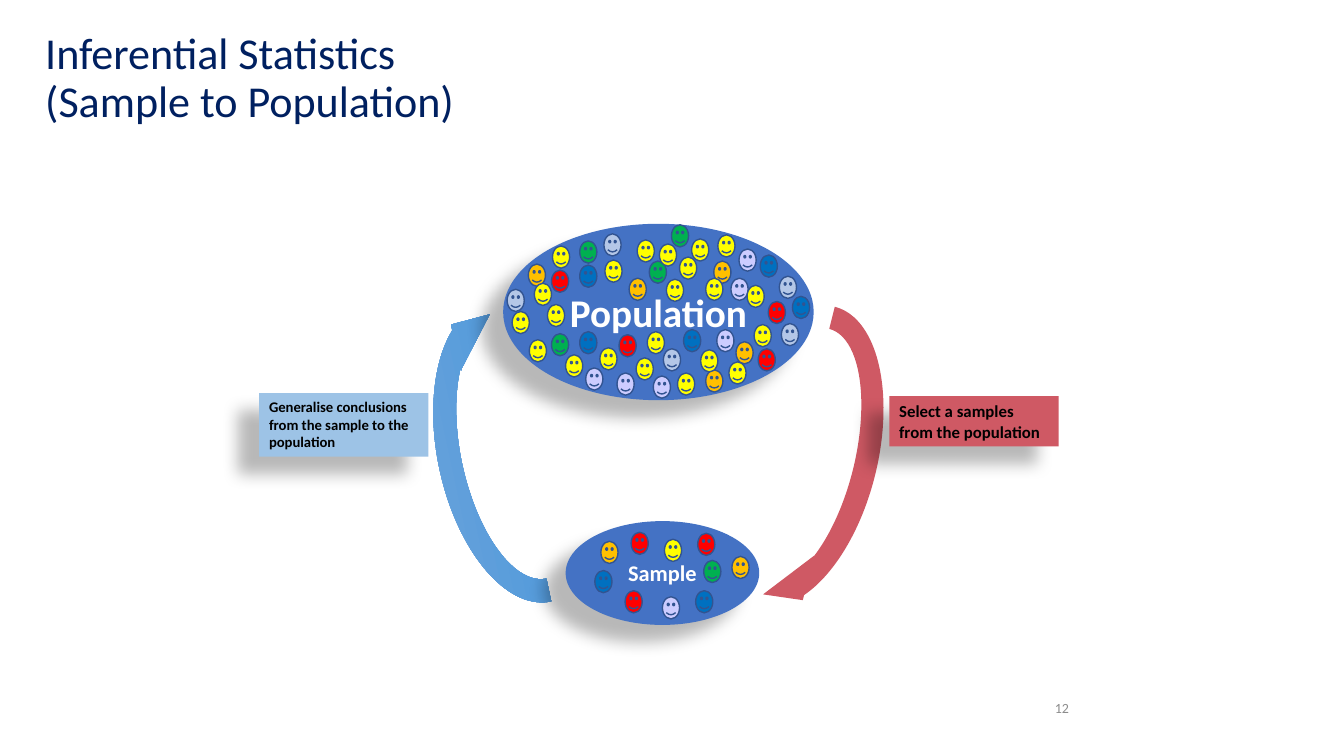
from pptx import Presentation
from pptx.dml.color import RGBColor
from pptx.enum import shapes, text
from pptx.oxml import parse_xml
from pptx.oxml.ns import nsdecls
from pptx.util import Inches, Pt

NAVY = RGBColor(0x00, 0x20, 0x60)
GREY = RGBColor(0x8C, 0x8C, 0x8C)
BLACK = RGBColor(0x00, 0x00, 0x00)
WHITE = RGBColor(0xFF, 0xFF, 0xFF)
ROYAL = RGBColor(0x44, 0x72, 0xC4)
EDGE = RGBColor(0x32, 0x54, 0x91)
ROSE = RGBColor(0xCF, 0x59, 0x64)
SKY = RGBColor(0x9D, 0xC3, 0xE6)
BLUE = RGBColor(0x00, 0x70, 0xC0)
YELLOW = RGBColor(0xFF, 0xFF, 0x00)
RED = RGBColor(0xFF, 0x00, 0x00)
LILAC = RGBColor(0xCC, 0xCC, 0xFF)
GREEN = RGBColor(0x00, 0xB0, 0x50)
AMBER = RGBColor(0xFF, 0xC0, 0x00)
PALE = RGBColor(0xB4, 0xC7, 0xE7)
FADE = [(0, "71A6DB"), (50, "559BDB"), (100, "448ACA")]

KIND = shapes.MSO_SHAPE
LEFT, MID, RIGHT = text.PP_ALIGN.LEFT, text.PP_ALIGN.CENTER, text.PP_ALIGN.RIGHT
FACE = (0.17, 0.22)

TITLE = "Inferential Statistics\v(Sample to Population)"
PAGE = "12"
ARROWS = [((3.52, 3.56, 3.26, 1.85), 257.9, None),
          ((6.27, 3.62, 3.28, 1.81), 104, ROSE)]
NOTES = [
    ("Select a samples from the population", (8.82, 3.93, 1.68, 0.5), ROSE, 12),
    ("Generalise conclusions from the sample to the population",
     (2.57, 3.9, 1.68, 0.63), SKY, 10.5),
]
# Left and top of every face, by colour
SAMPLE = {
    BLUE: [(5.9, 5.66), (6.9, 5.86)],
    YELLOW: [(6.59, 5.35)],
    RED: [(6.26, 5.28), (6.2, 5.86), (6.92, 5.29)],
    LILAC: [(6.57, 5.92)],
    GREEN: [(6.98, 5.56)],
    AMBER: [(5.96, 5.37), (7.26, 5.52)],
}
PEOPLE = {
    BLUE: [(5.75, 2.63), (5.75, 3.29), (6.78, 3.27), (7.86, 2.94), (7.54, 2.53)],
    AMBER: [(6.24, 2.76), (7.08, 2.59), (7, 3.67), (7.3, 3.39), (5.24, 2.62)],
    PALE: [(6.58, 3.46), (7.75, 3.21), (7.73, 2.74), (5.99, 2.32), (5.03, 2.87)],
    RED: [(5.47, 2.68), (7.52, 3.46), (6.14, 3.32), (7.62, 2.99)],
    LILAC: [(7.11, 3.27), (7.33, 2.47), (6.48, 3.73), (7.25, 2.76),
            (5.81, 3.65), (6.12, 3.7)],
    GREEN: [(5.75, 2.39), (5.47, 3.31), (6.44, 2.59), (6.66, 2.23)],
    YELLOW: [(6, 2.58), (6.42, 3.29), (6.32, 2.38), (6.74, 2.55), (6.61, 2.77),
             (7, 2.76), (6.86, 2.37), (5.95, 3.45), (6.72, 3.7), (6.31, 3.55),
             (5.25, 3.37), (5.3, 2.81), (7.48, 3.22), (5.08, 3.09), (7.23, 3.59),
             (5.61, 3.52), (7.41, 2.83), (5.48, 2.44), (7.12, 2.33), (6.95, 3.47),
             (5.43, 3.02), (6.54, 2.42)],
}


def write(shape, words, size, color, bold=False, align=LEFT,
          anchor=text.MSO_ANCHOR.MIDDLE, space=None, grow=False):
    frame = shape.text_frame
    frame.word_wrap = True
    frame.vertical_anchor = anchor
    if grow:
        frame.auto_size = text.MSO_AUTO_SIZE.SHAPE_TO_FIT_TEXT
    para = frame.paragraphs[0]
    para.text = words
    para.alignment = align
    para.line_spacing = space
    for run in para.runs:
        font = run.font
        font.name, font.size, font.bold = "Calibri", Pt(size), bold
        font.color.rgb = color


def draw(home, kind, box, fill=None, line=None):
    shape = home.add_shape(kind, *map(Inches, box))
    shape.shadow.inherit = False
    if fill is not None:
        shape.fill.solid()
        shape.fill.fore_color.rgb = fill
    if line is None:
        shape.line.fill.background()
    else:
        shape.line.color.rgb = line
        shape.line.width = Pt(1)
    return shape


def cast(shape):
    """Give the shape a soft shadow down and to the left."""
    props = shape._element.spPr
    props.remove(props.find("{*}effectLst"))
    props.append(parse_xml(
        f'<a:effectLst {nsdecls("a")}><a:outerShdw blurRad="{Pt(11.8)}" '
        f'dist="{Pt(19.7)}" dir="{141 * 60000}" algn="ctr" rotWithShape="0">'
        '<a:srgbClr val="000000"><a:alpha val="28000"/></a:srgbClr>'
        '</a:outerShdw></a:effectLst>'))


def blend(shape):
    """Fill the shape with the three-step blue gradient."""
    stops = "".join(f'<a:gs pos="{pos * 1000}"><a:srgbClr val="{tone}"/></a:gs>'
                    for pos, tone in FADE)
    shape._element.spPr.find("{*}prstGeom").addnext(parse_xml(
        f'<a:gradFill {nsdecls("a")} rotWithShape="1"><a:gsLst>{stops}</a:gsLst>'
        f'<a:lin ang="{90 * 60000}" scaled="0"/></a:gradFill>'))


def crowd(slide, name, size, box, faces):
    """Group a labelled ellipse with the faces on it."""
    group = slide.shapes.add_group_shape().shapes
    oval = draw(group, KIND.OVAL, box, ROYAL)
    cast(oval)
    write(oval, name, size, WHITE, bold=True, align=MID)
    for color, spots in faces.items():
        for spot in spots:
            draw(group, KIND.SMILEY_FACE, spot + FACE, color, EDGE)


def main():
    deck = Presentation()
    deck.slide_width, deck.slide_height = Inches(13.33), Inches(7.5)
    slide = deck.slides.add_slide(deck.slide_layouts[6])
    parts = slide.shapes

    head = parts.add_textbox(*map(Inches, (0.35, 0.22, 9.41, 1.13)))
    write(head, TITLE, 31.5, NAVY, space=0.9)
    foot = parts.add_textbox(*map(Inches, (8.85, 6.86, 1.85, 0.32)))
    write(foot, PAGE, 10, GREY, align=RIGHT)

    for box, turn, color in ARROWS:
        arrow = draw(parts, KIND.CIRCULAR_ARROW, box, color)
        arrow.rotation = turn
        if color is None:
            blend(arrow)

    crowd(slide, "Sample", 16, (5.61, 5.17, 1.92, 1.03), SAMPLE)
    for words, box, color, size in NOTES:
        note = draw(parts, KIND.RECTANGLE, box, color)
        cast(note)
        write(note, words, size, BLACK, bold=True,
              anchor=text.MSO_ANCHOR.TOP, grow=True)
    crowd(slide, "Population", 28, (4.99, 2.22, 3.08, 1.75), PEOPLE)

    deck.save("out.pptx")


if __name__ == "__main__":
    main()
